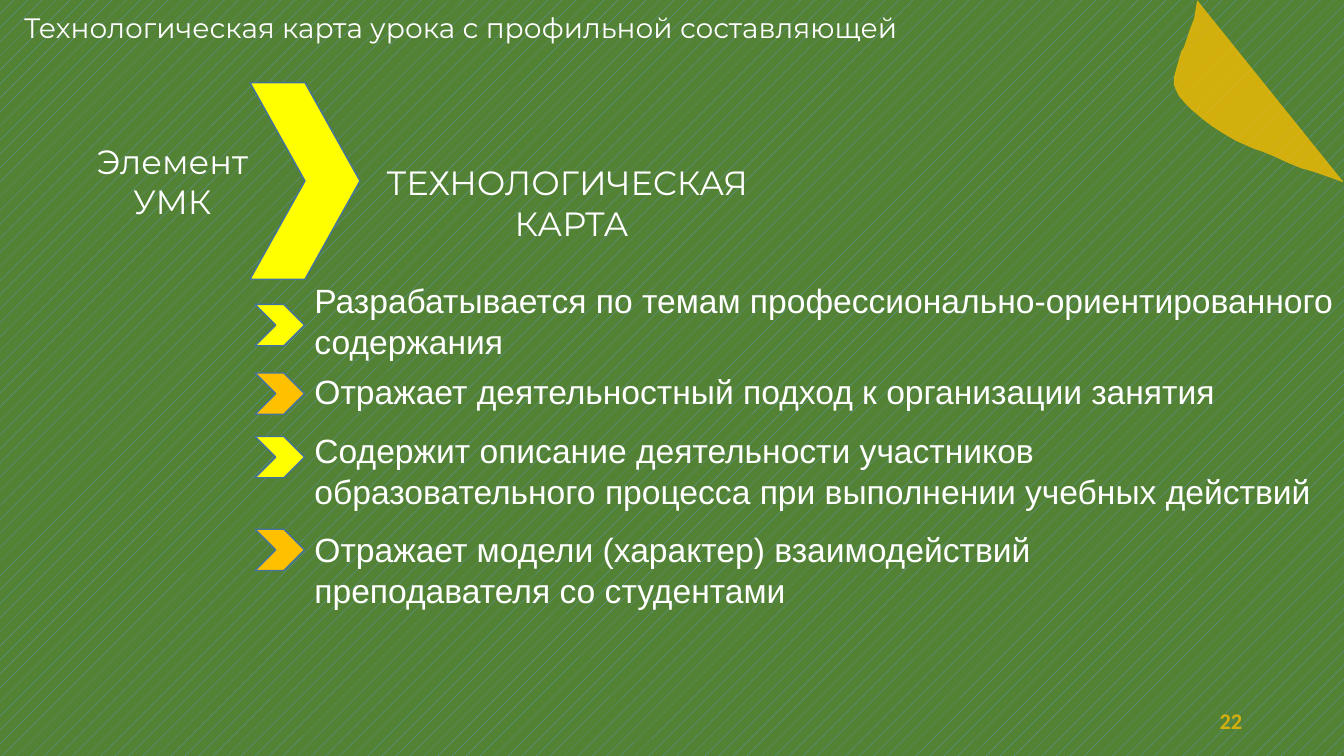
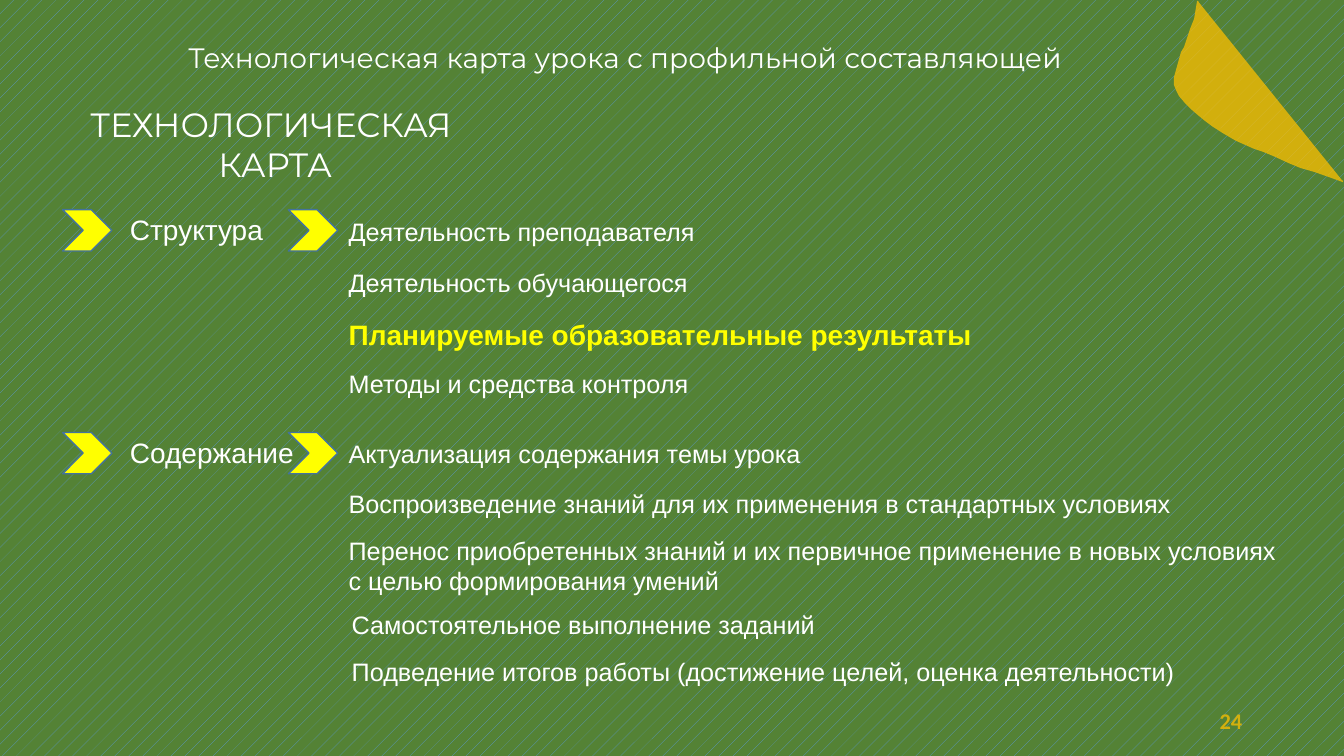
from dataclasses import dataclass

from lxml.etree import SubElement
from pptx import Presentation
from pptx.dml.color import RGBColor
from pptx.enum.dml import MSO_PATTERN_TYPE as Pattern
from pptx.enum.shapes import MSO_SHAPE as Shape
from pptx.enum.text import MSO_ANCHOR as Anchor, MSO_AUTO_SIZE as AutoSize, PP_ALIGN as Align
from pptx.oxml.ns import qn
from pptx.slide import Slide
from pptx.util import Emu, Pt

PX = 9144  # EMU in one px, 100 px to the inch
PAGE_WIDTH, PAGE_HEIGHT = 1333, 750

GREEN, BLUE = "548235", "5B9BD5"
WHITE, YELLOW, AMBER = "FFFFFF", "FFFF00", "FFC000"
GOLD, OUTLINE = "D3B00E", "43739E"
HEADING_FONT, BODY_FONT, NUMBER_FONT = "Montserrat", "Arial", "Calibri"

TITLE = "Технологическая карта урока с профильной составляющей"
CARD_LINES = ("ТЕХНОЛОГИЧЕСКАЯ ", "КАРТА")
LEAF_POINTS = (
    (1188, 1), (1186, 13), (1185, 19), (1181, 29), (1175, 47), (1172, 52),
    (1170, 59), (1165, 77), (1165, 84), (1167, 89), (1170, 95), (1176, 102),
    (1182, 108), (1189, 114), (1195, 119), (1203, 125), (1214, 132),
    (1226, 139), (1244, 147), (1253, 150), (1265, 155), (1278, 161),
    (1290, 166), (1304, 170), (1321, 176), (1332, 180),
)


@dataclass(frozen=True)
class Style:
    size: int
    font: str = BODY_FONT
    color: str = WHITE
    bold: bool = False
    align: Align = Align.LEFT


TITLE_STYLE = Style(20, HEADING_FONT)
HEADING = Style(24, HEADING_FONT, align=Align.CENTER)
FEATURE = Style(24)
LABEL = Style(20)
ITEM = Style(18)
KEY_ITEM = Style(20, color=YELLOW, bold=True)
PAGE_NUMBER = Style(16, NUMBER_FONT, GOLD, True, Align.RIGHT)


@dataclass(frozen=True)
class TextBlock:
    left: int
    top: int
    width: int
    height: int
    lines: tuple[str, ...]
    style: Style
    wrap: bool = False


@dataclass(frozen=True)
class Chevron:
    left: int
    top: int
    color: str = YELLOW
    width: int = 49
    height: int = 41


@dataclass(frozen=True)
class Feature:
    """A chevron with the statement beside it."""
    chevron_top: int
    text_top: int
    width: int
    lines: tuple[str, ...]
    wrap: bool = False
    align: Align = Align.LEFT


@dataclass(frozen=True)
class Section:
    """A labelled group with its list of items."""
    top: int
    label: str
    label_width: int
    items: tuple[TextBlock, ...]


FEATURES = (
    Feature(302, 273, 1041, ("Разрабатывается по темам профессионально-ориентированного", "содержания")),
    Feature(370, 363, 922, ("Отражает деятельностный подход к организации занятия",)),
    Feature(433, 422, 1011, ("Содержит описание деятельности участников образовательного "
                             "процесса при выполнении учебных действий",), True),
    Feature(525, 520, 997, ("Отражает модели (характер) взаимодействий ",
                            "преподавателя со студентами"), True, Align.JUSTIFY),
)


def item(top: int, width: int, *lines: str, left: int = 336, style: Style = ITEM) -> TextBlock:
    return TextBlock(left, top, width, 40 if len(lines) == 1 else 71, lines, style)


SECTIONS = (
    Section(208, "Структура", 153, (
        item(210, 367, "Деятельность преподавателя"),
        item(260, 360, "Деятельность обучающегося"),
        item(310, 643, "Планируемые образовательные результаты", style=KEY_ITEM),
        item(360, 361, "Методы и средства контроля"),
    )),
    Section(429, "Содержание", 184, (
        item(430, 473, "Актуализация содержания темы урока"),
        item(480, 844, "Воспроизведение знаний для их применения в стандартных условиях"),
        item(526, 950, "Перенос приобретенных знаний и их первичное применение в новых условиях",
             "с целью формирования умений"),
        item(600, 484, "Самостоятельное выполнение заданий", left=339),
        item(646, 844, "Подведение итогов работы (достижение целей, оценка деятельности)", left=339),
    )),
)


def px(*lengths: int) -> list[Emu]:
    return [Emu(length * PX) for length in lengths]


def rgb(color: str) -> RGBColor:
    return RGBColor.from_string(color)


def paint(shape, fill: str, line: str) -> None:
    shape.shadow.inherit = False
    shape.fill.solid()
    shape.fill.fore_color.rgb = rgb(fill)
    shape.line.color.rgb = rgb(line)
    shape.line.width = Pt(1)


def add_text(page: Slide, block: TextBlock, fixed: bool = False) -> None:
    """A fixed box keeps its height and centres its text vertically."""
    box = page.shapes.add_textbox(*px(block.left, block.top, block.width, block.height))
    frame = box.text_frame
    frame.word_wrap = block.wrap
    frame.auto_size = AutoSize.NONE if fixed else AutoSize.SHAPE_TO_FIT_TEXT
    frame.vertical_anchor = Anchor.MIDDLE if fixed else Anchor.TOP
    style = block.style
    for index, line in enumerate(block.lines):
        para = frame.add_paragraph() if index else frame.paragraphs[0]
        para.alignment = style.align
        span = para.add_run()
        span.text = line
        span.font.name = style.font
        span.font.size = Pt(style.size)
        span.font.bold = style.bold
        span.font.color.rgb = rgb(style.color)


def add_chevron(page: Slide, chevron: Chevron) -> None:
    shape = page.shapes.add_shape(
        Shape.CHEVRON, *px(chevron.left, chevron.top, chevron.width, chevron.height))
    paint(shape, chevron.color, OUTLINE)


def add_leaf(page: Slide) -> None:
    builder = page.shapes.build_freeform(*LEAF_POINTS[0], scale=PX)
    builder.add_line_segments(LEAF_POINTS[1:], close=False)
    leaf = builder.convert_to_shape()
    paint(leaf, AMBER, GOLD)
    fill_color = leaf.element.spPr.find(qn("a:solidFill")).find(qn("a:srgbClr"))
    SubElement(fill_color, qn("a:alpha")).set("val", "74000")


def add_page(deck, number: int, title_left: int, title_top: int,
             card_left: int, card_top: int) -> Slide:
    page = deck.slides.add_slide(deck.slide_layouts[6])
    background = page.background.fill
    background.patterned()
    background.pattern = Pattern.PERCENT_5
    background.fore_color.rgb = rgb(BLUE)
    background.back_color.rgb = rgb(GREEN)
    add_leaf(page)
    add_text(page, TextBlock(title_left, title_top, 983, 44, (TITLE,), TITLE_STYLE))
    add_text(page, TextBlock(card_left, card_top, 422, 91, CARD_LINES, HEADING))
    add_text(page, TextBlock(942, 695, 300, 40, (str(number),), PAGE_NUMBER, True), fixed=True)
    return page


def add_features_page(deck) -> None:
    page = add_page(deck, 22, 14, 6, 356, 156)
    add_text(page, TextBlock(78, 135, 186, 91, ("Элемент", "УМК"), HEADING))
    add_chevron(page, Chevron(248, 82, width=109, height=195))
    for index, feature in enumerate(FEATURES):
        add_chevron(page, Chevron(253, feature.chevron_top, (YELLOW, AMBER)[index % 2]))
        height = 50 if len(feature.lines) == 1 and not feature.wrap else 91
        style = Style(FEATURE.size, align=feature.align)
        add_text(page, TextBlock(302, feature.text_top, feature.width, height,
                                 feature.lines, style, feature.wrap))


def add_sections_page(deck) -> None:
    page = add_page(deck, 24, 177, 35, 62, 98)
    for section in SECTIONS:
        add_text(page, TextBlock(119, section.top - 2, section.label_width, 44,
                                 (section.label,), LABEL))
        for left in (62, 286):
            add_chevron(page, Chevron(left, section.top))
        for block in section.items:
            add_text(page, block)


def main() -> None:
    deck = Presentation()
    deck.slide_width, deck.slide_height = px(PAGE_WIDTH, PAGE_HEIGHT)
    add_features_page(deck)
    add_sections_page(deck)
    deck.save("out.pptx")


if __name__ == "__main__":
    main()
